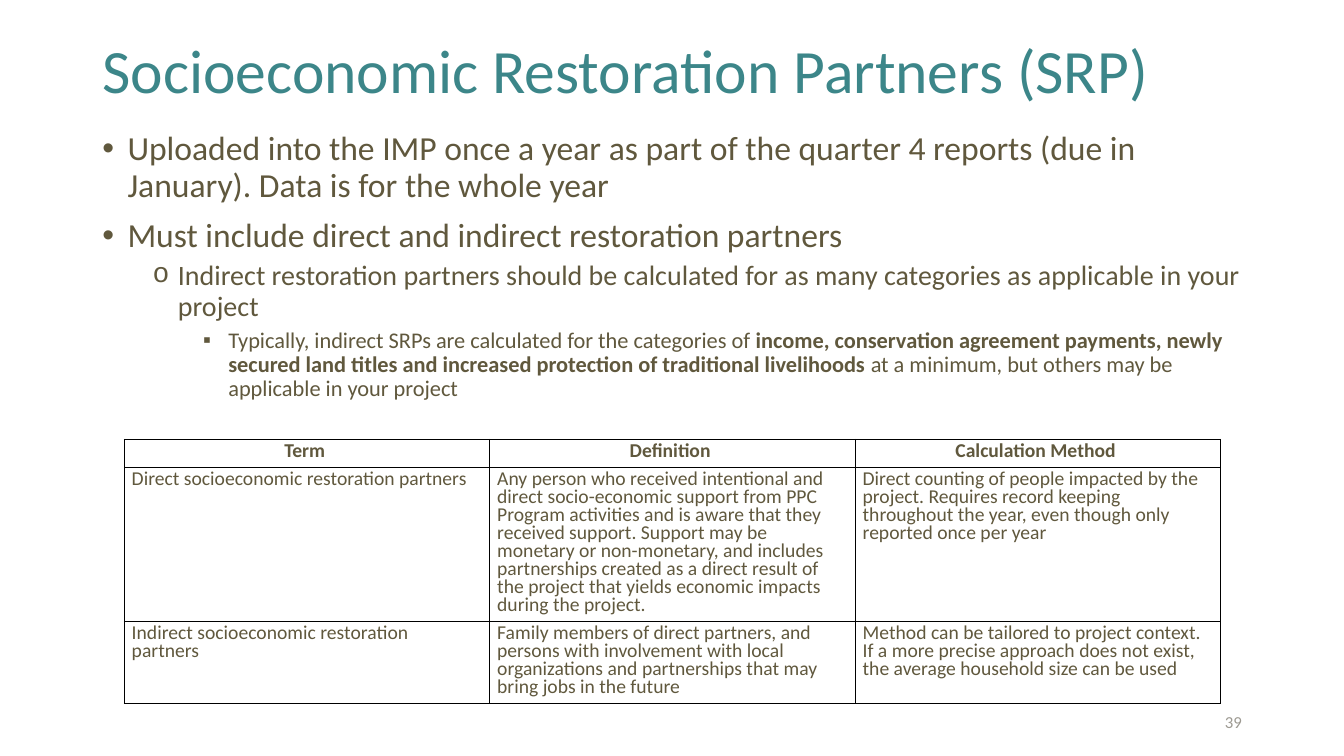
import lxml.etree
import pptx
import pptx.dml.color
import pptx.enum.text
import pptx.oxml.ns
import pptx.util

Cm = pptx.util.Cm
Pt = pptx.util.Pt
ALIGN = pptx.enum.text.PP_ALIGN
ANCHOR = pptx.enum.text.MSO_ANCHOR

HEADING = "Socioeconomic Restoration Partners (SRP)"
POINTS = [
    (0, [("Uploaded into the IMP once a year as part of the quarter 4 reports (due in January). "
          "Data is for the whole year", False)]),
    (0, [("Must include direct and indirect restoration partners", False)]),
    (1, [("Indirect restoration partners should be calculated for as many categories as applicable "
          "in your project", False)]),
    (2, [("Typically, indirect SRPs are calculated for the categories of", False),
         (" income, conservation agreement payments, newly secured land titles and increased "
          "protection of traditional livelihoods", True),
         (" at a minimum, but others may be applicable in your project", False)]),
]
TERMS = [
    ("Term", "Definition", "Calculation Method"),
    ("Direct socioeconomic restoration partners",
     "Any person who received intentional and direct socio-economic support from PPC Program "
     "activities and is aware that they received support. Support may be monetary or "
     "non-monetary, and includes partnerships created as a direct result of the project that "
     "yields economic impacts during the project.",
     "Direct counting of people impacted by the project. Requires record keeping throughout "
     "the year, even though only reported once per year"),
    ("Indirect socioeconomic restoration partners",
     "Family members of direct partners, and persons with involvement with local organizations "
     "and partnerships that may bring jobs in the future",
     "Method can be tailored to project context. If a more precise approach does not exist, "
     "the average household size can be used"),
]
PAGE = "39"

THEME = {
    "font": "Calibri",
    "heading": ("3C8689", 44),
    "points": [("60583D", 24), ("60583D", 20), ("60583D", 16)],
    "terms": ("60583D", 14),
    "page": ("9D9A92", 12),
    "border": "000000",
}
BULLETS = [("•", "Arial", 10), ("o", "Courier New", 5), ("▪", "Arial", 5)]
INDENT = Cm(0.635)
TERM_WIDTH = Cm(9.21)
TERM_HEIGHTS = [Cm(0.71), Cm(3.86), Cm(2.05)]
CELL_END = chr(160)


def apply(target, formats):
    for attribute, value in formats.items():
        setattr(target, attribute, value)


def write(paragraph, words, look, bold=False):
    colour, size = look
    run = paragraph.add_run()
    run.text = words
    apply(run.font, {"name": THEME["font"], "size": Pt(size), "bold": bold})
    run.font.color.rgb = pptx.dml.color.RGBColor.from_string(colour)


def child(parent, tag, **attributes):
    return lxml.etree.SubElement(parent, pptx.oxml.ns.qn(tag), attributes)


def add_bullet(paragraph, level):
    symbol, face, _ = BULLETS[level]
    properties = paragraph._p.get_or_add_pPr()
    properties.set("marL", str(INDENT * (2 * level + 1)))
    properties.set("indent", str(-INDENT))
    child(properties, "a:buFont", typeface=face)
    child(properties, "a:buChar", char=symbol)


def add_borders(cell):
    properties = cell._tc.get_or_add_tcPr()
    for side in ("a:lnL", "a:lnR", "a:lnT", "a:lnB"):
        line = child(properties, side, w=str(Pt(0.75)))
        child(child(line, "a:solidFill"), "a:srgbClr", val=THEME["border"])


def add_box(slide, left, top, width, height):
    frame = slide.shapes.add_textbox(Cm(left), Cm(top), Cm(width), Cm(height)).text_frame
    frame.word_wrap = True
    return frame


def add_heading(slide):
    heading = slide.shapes.title
    apply(heading, {"left": Cm(2.33), "top": Cm(0), "width": Cm(30.3), "height": Cm(3.73)})
    apply(heading.text_frame, {"vertical_anchor": ANCHOR.MIDDLE, "word_wrap": True,
                               "auto_size": pptx.enum.text.MSO_AUTO_SIZE.NONE})
    paragraph = heading.text_frame.paragraphs[0]
    apply(paragraph, {"alignment": ALIGN.LEFT, "line_spacing": 0.9})
    write(paragraph, HEADING, THEME["heading"])


def add_points(slide):
    frame = add_box(slide, 2.33, 3.2, 29.21, 12.09)
    for index, (level, pieces) in enumerate(POINTS):
        paragraph = frame.add_paragraph() if index else frame.paragraphs[0]
        add_bullet(paragraph, level)
        apply(paragraph, {"level": level, "line_spacing": 0.9,
                          "space_before": Pt(BULLETS[level][2] if index else 0)})
        for words, bold in pieces:
            write(paragraph, words, THEME["points"][level], bold)


def add_terms(slide):
    columns = len(TERMS[0])
    terms = slide.shapes.add_table(len(TERMS), columns, Cm(3.13), Cm(11.07),
                                   TERM_WIDTH * columns, sum(TERM_HEIGHTS)).table
    apply(terms, {"first_row": False, "horz_banding": False})
    for column in terms.columns:
        column.width = TERM_WIDTH
    for index, entries in enumerate(TERMS):
        terms.rows[index].height = TERM_HEIGHTS[index]
        is_header = index == 0
        for position, words in enumerate(entries):
            cell = terms.cell(index, position)
            apply(cell, {"margin_left": Cm(0.19), "margin_right": Cm(0.19),
                         "margin_top": Cm(0.13), "margin_bottom": Cm(0.13)})
            add_borders(cell)
            cell.fill.background()
            paragraph = cell.text_frame.paragraphs[0]
            apply(paragraph, {"alignment": ALIGN.CENTER if is_header else ALIGN.LEFT,
                              "line_spacing": Pt(12.8)})
            write(paragraph, words + CELL_END, THEME["terms"], is_header)


def add_page(slide):
    frame = add_box(slide, 23.93, 17.68, 7.62, 1.02)
    frame.vertical_anchor = ANCHOR.MIDDLE
    frame.paragraphs[0].alignment = ALIGN.RIGHT
    write(frame.paragraphs[0], PAGE, THEME["page"])


def main():
    deck = pptx.Presentation()
    apply(deck, {"slide_width": Cm(33.87), "slide_height": Cm(19.05)})
    slide = deck.slides.add_slide(deck.slide_layouts.get_by_name("Title Only"))
    for add_part in (add_heading, add_points, add_page, add_terms):
        add_part(slide)
    deck.save("out.pptx")


if __name__ == "__main__":
    main()
